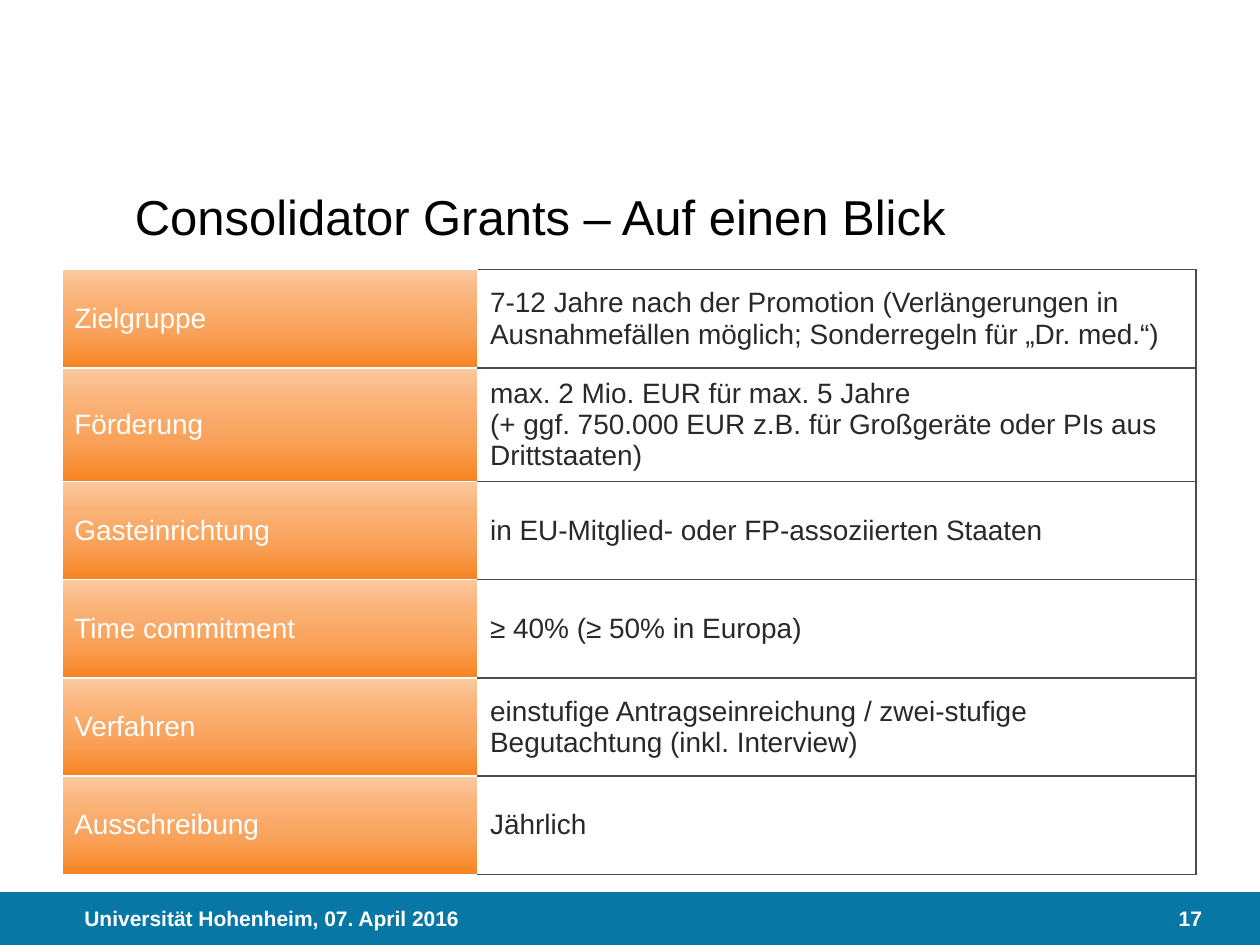
import pptx
import pptx.util
import pptx.dml.color
import pptx.enum.shapes
import pptx.enum.text
import pptx.oxml
import pptx.oxml.ns

Inches = pptx.util.Inches
Pt = pptx.util.Pt
ALIGN = pptx.enum.text.PP_ALIGN
MIDDLE = pptx.enum.text.MSO_ANCHOR.MIDDLE

COLORS = {
    "white": "FFFFFF",
    "black": "000000",
    "footer": "0778A5",
    "text": "292929",
    "border": "4D4D4D",
}
# Position in percent and colour, running from bottom to top
ORANGE_STOPS = [(0, "F78421"), (35, "F9A159"), (70, "FAB276"), (100, "FBC99F")]

FACTS = [
    ("Zielgruppe", "7-12 Jahre nach der Promotion (Verlängerungen in "
                   "Ausnahmefällen möglich; Sonderregeln für „Dr. med.“)"),
    ("Förderung", "max. 2 Mio. EUR für max. 5 Jahre\n"
                  "(+ ggf. 750.000 EUR z.B. für Großgeräte oder PIs aus Drittstaaten)"),
    ("Gasteinrichtung", "in EU-Mitglied- oder FP-assoziierten Staaten"),
    ("Time commitment", "≥ 40% (≥ 50% in Europa)"),
    ("Verfahren", "einstufige Antragseinreichung / zwei-stufige "
                  "Begutachtung (inkl. Interview)"),
    ("Ausschreibung", "Jährlich"),
]


class SlideBuilder:
    font_name = "Arial"

    def __init__(self, slide):
        self.slide = slide

    def rgb(self, color):
        return pptx.dml.color.RGBColor.from_string(COLORS[color])

    def set_text(self, frame, text, size, color, bold=False, align=ALIGN.LEFT):
        paragraph = frame.paragraphs[0]
        paragraph.text = text
        paragraph.alignment = align
        font = paragraph.font
        font.name, font.size, font.bold = self.font_name, Pt(size), bold
        font.color.rgb = self.rgb(color)

    def title(self, text, left, top, width, height):
        title = self.slide.shapes.title
        title.left, title.top = Inches(left), Inches(top)
        title.width, title.height = Inches(width), Inches(height)
        title.text_frame.vertical_anchor = MIDDLE
        self.set_text(title.text_frame, text, 28, "black")

    def bar(self, left, top, width, height, color):
        bar = self.slide.shapes.add_shape(
            pptx.enum.shapes.MSO_SHAPE.RECTANGLE,
            Inches(left), Inches(top), Inches(width), Inches(height))
        bar.shadow.inherit = False
        bar.fill.solid()
        bar.fill.fore_color.rgb = self.rgb(color)
        bar.line.fill.background()

    def footer_text(self, text, left, top, width, height, align=ALIGN.LEFT):
        box = self.slide.shapes.add_textbox(
            Inches(left), Inches(top), Inches(width), Inches(height))
        frame = box.text_frame
        frame.word_wrap = True
        frame.vertical_anchor = MIDDLE
        frame.margin_left = frame.margin_right = 0
        frame.margin_top = frame.margin_bottom = 0
        self.set_text(frame, text, 12, "white", bold=True, align=align)

    def borders(self, cell, **sides):
        properties = cell._tc.get_or_add_tcPr()
        for side in ("L", "R", "T", "B"):
            properties.append(pptx.oxml.parse_xml(
                f'<a:ln{side} {pptx.oxml.ns.nsdecls("a")} w="{Pt(1)}"><a:solidFill>'
                f'<a:srgbClr val="{COLORS[sides[side]]}"/></a:solidFill></a:ln{side}>'))

    def gradient(self, cell, stops):
        stop_xml = "".join(
            f'<a:gs pos="{percent * 1000}"><a:srgbClr val="{color}"/></a:gs>'
            for percent, color in stops)
        cell._tc.get_or_add_tcPr().append(pptx.oxml.parse_xml(
            f'<a:gradFill {pptx.oxml.ns.nsdecls("a")}><a:gsLst>{stop_xml}</a:gsLst>'
            f'<a:lin ang="{270 * 60000}" scaled="0"/></a:gradFill>'))

    def cell(self, cell, text, color):
        cell.vertical_anchor = MIDDLE
        cell.margin_left = cell.margin_right = Inches(0.1)
        cell.margin_top = cell.margin_bottom = Inches(0.05)
        self.set_text(cell.text_frame, text, 16, color)

    def fact_table(self, facts, left, top, column_widths, row_height):
        table = self.slide.shapes.add_table(
            len(facts), len(column_widths), Inches(left), Inches(top),
            Inches(sum(column_widths)), Inches(row_height * len(facts))).table
        for column, width in zip(table.columns, column_widths):
            column.width = Inches(width)
        for row, (label, detail) in enumerate(facts):
            table.rows[row].height = Inches(row_height)
            label_cell, detail_cell = table.cell(row, 0), table.cell(row, 1)
            self.cell(label_cell, label, "white")
            self.borders(label_cell, L="white", R="white", T="white", B="white")
            self.gradient(label_cell, ORANGE_STOPS)
            self.cell(detail_cell, detail, "text")
            self.borders(detail_cell, L="white", R="border", T="border", B="border")
            detail_cell.fill.solid()
            detail_cell.fill.fore_color.rgb = self.rgb("white")


def main():
    presentation = pptx.Presentation()
    presentation.slide_width, presentation.slide_height = Inches(10), Inches(7.5)
    title_only = presentation.slide_layouts[5]
    builder = SlideBuilder(presentation.slides.add_slide(title_only))

    # Footer
    builder.bar(0, 7.08, 10, 0.42, "footer")
    builder.footer_text("17", 6.98, 7.08, 2.56, 0.42, ALIGN.RIGHT)
    builder.footer_text("Universität Hohenheim, 07. April 2016", 0.67, 7.08, 3.14, 0.42)

    # Title and key facts
    builder.title("Consolidator Grants – Auf einen Blick", 0.97, 1.47, 8.52, 0.48)
    builder.fact_table(FACTS, 0.49, 2.14, (3.3, 5.7), 0.78)

    presentation.save("out.pptx")


if __name__ == "__main__":
    main()
